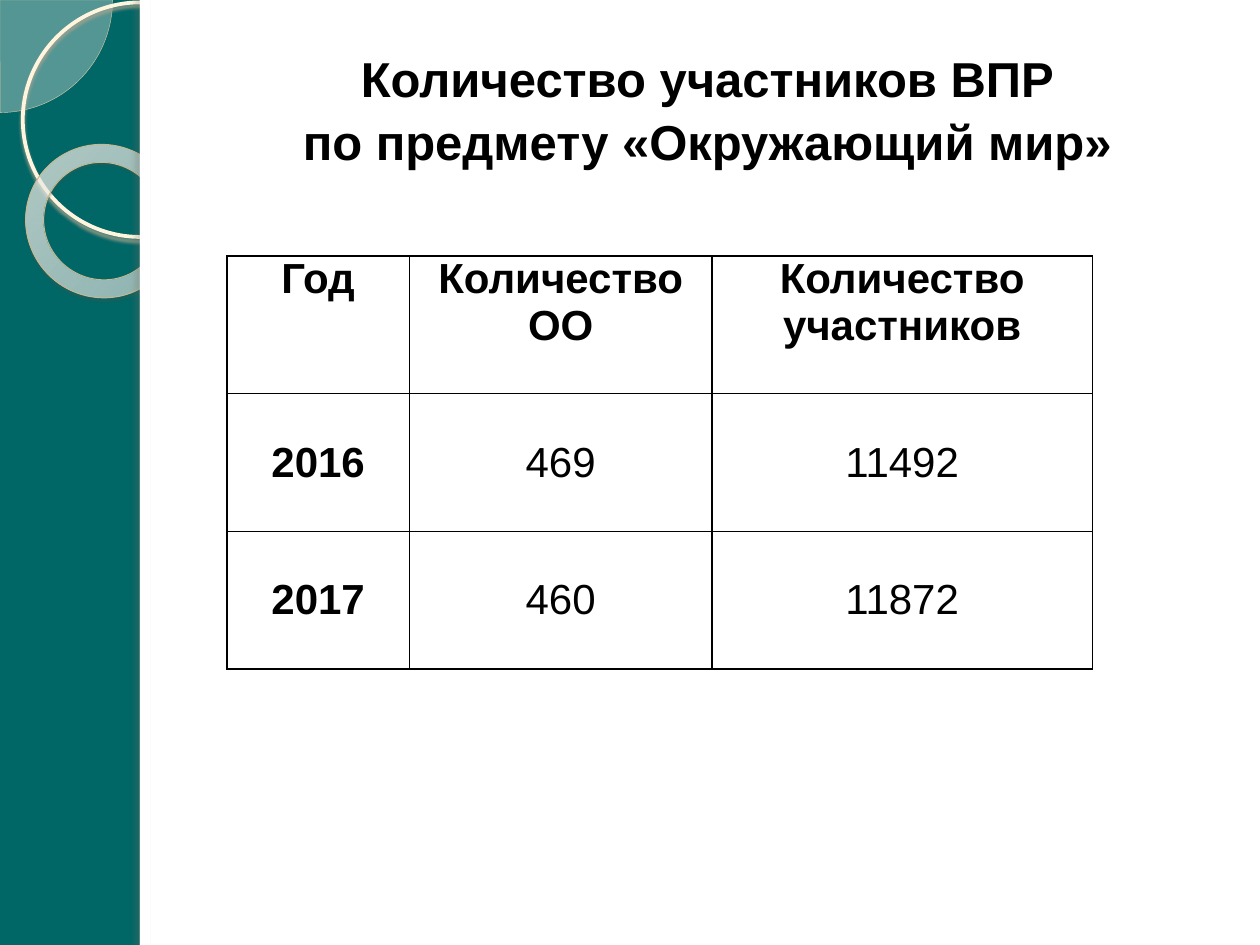
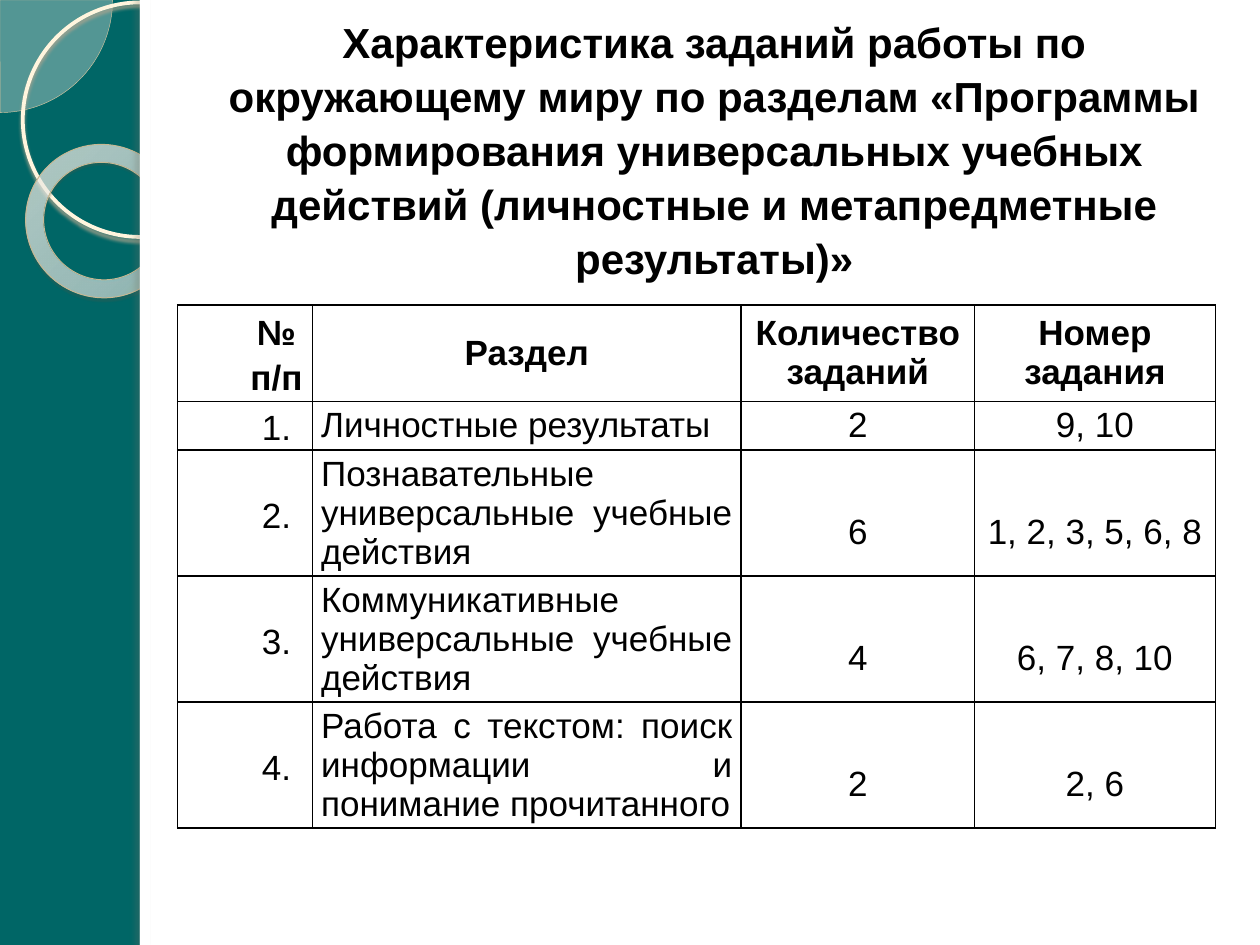
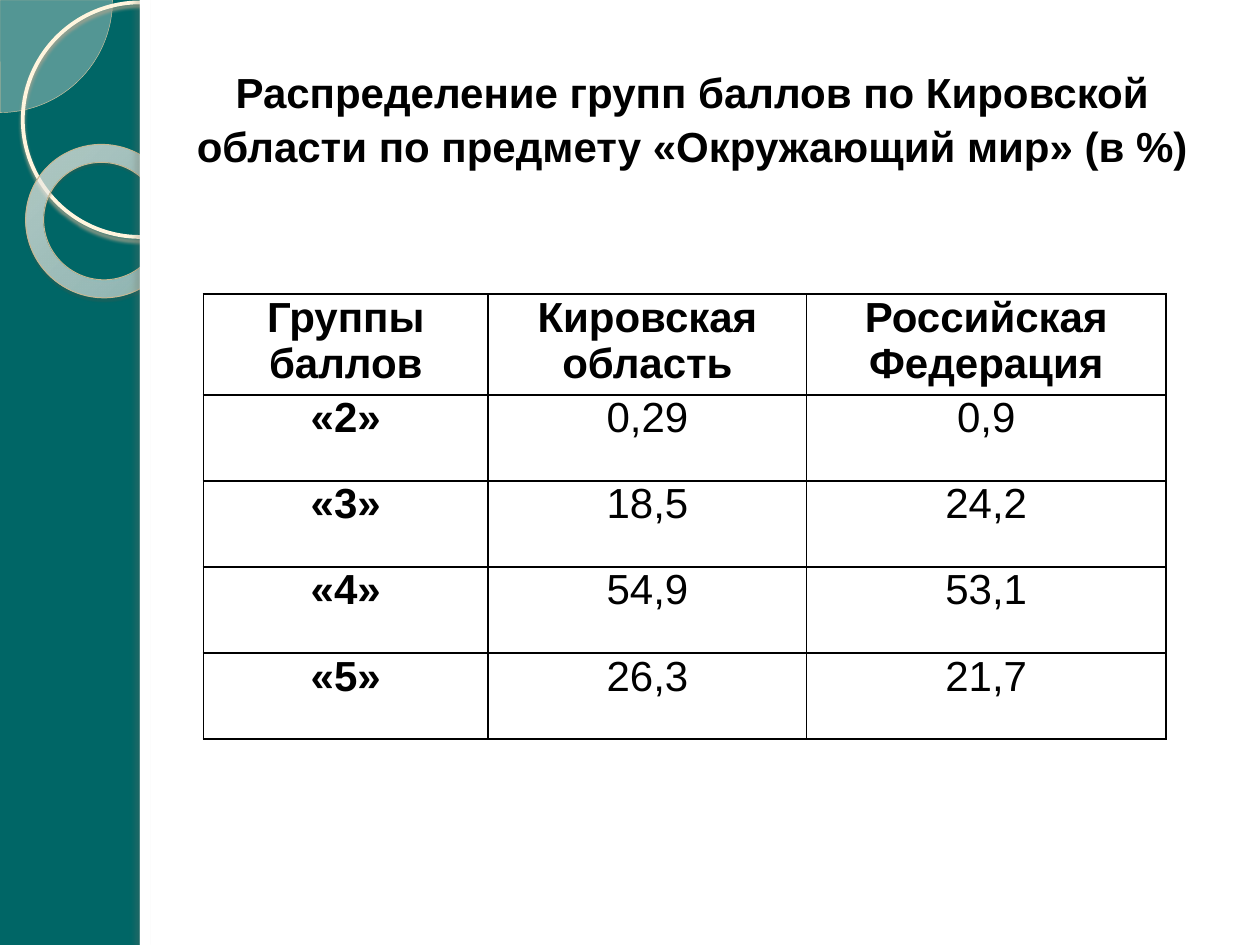
from lxml import etree
from pptx import Presentation
from pptx.dml.color import RGBColor
from pptx.enum.shapes import MSO_SHAPE
from pptx.enum.text import MSO_ANCHOR, PP_ALIGN
from pptx.oxml.ns import qn
from pptx.util import Pt

PIE, OVAL, DONUT, RECTANGLE = MSO_SHAPE.PIE, MSO_SHAPE.OVAL, MSO_SHAPE.DONUT, MSO_SHAPE.RECTANGLE
CENTER, JUSTIFY = PP_ALIGN.CENTER, PP_ALIGN.JUSTIFY
TOP, MIDDLE = MSO_ANCHOR.TOP, MSO_ANCHOR.MIDDLE

COLORS = {
    "band": "006666", "panel": "FFFFFF", "text": "000000", "border": "000000",
    "pie": "FEFAF4", "pie line": "D3C39F", "circle": "FFF5DE", "ring line": "C7B893",
    "circle shadow": "B0A68F", "ring shadow": "5A5444", "panel shadow": "736F63",
}
RING_STOPS = [(0, "FFFCF6", 70), (70, "FFFEFB", 55), (100, "F0D28E", 60)]
FONT = "Arial"

# kind, box, fill, (line colour, width), (shadow colour, opacity, blur, distance, angle)
DECORATIONS = [
    (PIE, (-64.3, -64.3, 128.6, 128.6), "pie", ("pie line", 0.25), None),
    (OVAL, (13, 1.4, 134, 134), None, ("circle", 2.15), ("circle shadow", 85, 2, 2, 90)),
    (DONUT, (14.4, 82.8, 88.6, 87.1), None, ("ring line", 0.58), ("ring shadow", 35, 1, 1.2, 75)),
    (RECTANGLE, (80, 0, 640, 540), "panel", None, None),
    (RECTANGLE, (80, 0, 5.8, 540), "panel", None, ("panel shadow", 25, 3, 3, 180)),
]

SLIDES = [
    {
        "title": "Количество участников ВПР\vпо предмету «Окружающий мир»",
        "title box": (109, 16.5, 590.4, 90), "title size": 28,
        "table at": (129.6, 146.2), "columns": (104.4, 172.8, 217.4),
        "heights": (78.7, 78.7, 78.7), "size": 24,
        "rows": [
            ("Год", "Количество ОО", "Количество участников"),
            ("2016", "469", "11492"),
            ("2017", "460", "11872"),
        ],
        "anchors": (TOP, MIDDLE), "bold first column": True, "numbered": False,
    },
    {
        "title": "Характеристика заданий работы по окружающему миру по разделам "
                 "«Программы формирования универсальных учебных действий "
                 "(личностные и метапредметные результаты)»",
        "title box": (113, 8, 590.4, 153), "title size": 24,
        "table at": (101.5, 174.2), "columns": (77, 245, 133.4, 137.6),
        "heights": (51.4, 25.7, 67, 67, 67), "size": 20,
        "rows": [
            ("№ п/п", "Раздел", "Количество заданий", "Номер задания"),
            ("1.", "Личностные результаты", "2", "9, 10"),
            ("2.", "Познавательные универсальные учебные действия", "6", "1, 2, 3, 5, 6, 8"),
            ("3.", "Коммуникативные универсальные учебные действия", "4", "6, 7, 8, 10"),
            ("4.", "Работа с текстом: поиск информации и понимание прочитанного", "2", "2, 6"),
        ],
        "anchors": (MIDDLE, MIDDLE), "bold first column": False, "numbered": True,
    },
    {
        "title": "Распределение групп баллов по Кировской области "
                 "по предмету «Окружающий мир» (в %)",
        "title box": (87.8, 22, 615.6, 90), "title size": 24,
        "table at": (116.2, 168), "columns": (162.8, 182, 205.2),
        "heights": (53.5, 49.2, 49.2, 49.2, 49.2), "size": 24,
        "rows": [
            ("Группы баллов", "Кировская область", "Российская Федерация"),
            ("«2»", "0,29", "0,9"),
            ("«3»", "18,5", "24,2"),
            ("«4»", "54,9", "53,1"),
            ("«5»", "26,3", "21,7"),
        ],
        "anchors": (TOP, TOP), "bold first column": True, "numbered": False,
    },
]


def add_child(parent, tag, **attributes):
    """Append a DrawingML element with the given attributes."""
    values = {name: str(value) for name, value in attributes.items()}
    return etree.SubElement(parent, qn(tag), values)


def style_paragraph(para, size, bold, align):
    para.alignment = align
    para.font.name = FONT
    para.font.size = Pt(size)
    para.font.bold = bold
    para.font.color.rgb = RGBColor.from_string(COLORS["text"])


deck = Presentation()
deck.slide_width, deck.slide_height = Pt(720), Pt(540)

for content in SLIDES:
    page = deck.slides.add_slide(deck.slide_layouts[6])
    page.background.fill.solid()
    page.background.fill.fore_color.rgb = RGBColor.from_string(COLORS["band"])

    # Side band decorations and the white panel
    for kind, bounds, fill, line, shadow in DECORATIONS:
        shape = page.shapes.add_shape(kind, *map(Pt, bounds))
        shape.shadow.inherit = False
        properties = shape.element.spPr
        if fill:
            shape.fill.solid()
            shape.fill.fore_color.rgb = RGBColor.from_string(COLORS[fill])
        else:
            shape.fill.background()
        if line:
            shape.line.color.rgb = RGBColor.from_string(COLORS[line[0]])
            shape.line.width = Pt(line[1])
        else:
            shape.line.fill.background()

        if kind == PIE:
            shape.adjustments[0], shape.adjustments[1] = 0, 54
            color = properties.find(qn("a:solidFill")).find(qn("a:srgbClr"))
            add_child(color, "a:alpha", val=33000)
        elif kind == DONUT:
            shape.rotation = 38.6
            shape.adjustments[0] = 0.118
            shape.fill.gradient()
            gradient = properties.find(qn("a:gradFill"))
            for child in list(gradient):
                gradient.remove(child)
            stops = add_child(gradient, "a:gsLst")
            for position, tint, opacity in RING_STOPS:
                stop = add_child(stops, "a:gs", pos=position * 1000)
                color = add_child(stop, "a:srgbClr", val=tint)
                add_child(color, "a:alpha", val=opacity * 1000)
            focus = add_child(gradient, "a:path", path="circle")
            add_child(focus, "a:fillToRect", l=-408000, t=-50000, r=508000, b=150000)

        if shadow:
            name, opacity, blur, distance, angle = shadow
            effect = add_child(properties.find(qn("a:effectLst")), "a:outerShdw",
                               blurRad=Pt(blur), dist=Pt(distance), dir=angle * 60000,
                               algn="ctr", rotWithShape=0)
            color = add_child(effect, "a:srgbClr", val=COLORS[name])
            add_child(color, "a:alpha", val=opacity * 1000)

    # Title
    box = page.shapes.add_textbox(*map(Pt, content["title box"]))
    frame = box.text_frame
    frame.word_wrap = True
    frame.vertical_anchor = MIDDLE
    frame.text = content["title"]
    frame.paragraphs[0].line_spacing = 1.07
    style_paragraph(frame.paragraphs[0], content["title size"], True, CENTER)

    # Table
    rows, columns, heights = content["rows"], content["columns"], content["heights"]
    left, top = content["table at"]
    table = page.shapes.add_table(len(rows), len(columns), Pt(left), Pt(top),
                                  Pt(sum(columns)), Pt(sum(heights))).table
    table.first_row = table.horz_banding = False
    for column, width in zip(table.columns, columns):
        column.width = Pt(width)
    for row, height in zip(table.rows, heights):
        row.height = Pt(height)

    for row_index, row in enumerate(rows):
        is_header = row_index == 0
        for column_index, text in enumerate(row):
            is_first = column_index == 0
            cell = table.cell(row_index, column_index)
            cell.margin_left = cell.margin_right = Pt(5)
            cell.margin_top = cell.margin_bottom = 0
            cell.vertical_anchor = content["anchors"][0 if is_header else 1]
            cell.text = text
            para = cell.text_frame.paragraphs[0]
            bold = is_header or (is_first and content["bold first column"])
            align = CENTER
            if content["numbered"]:
                if is_first:
                    cell.margin_left = Pt(41)
                    para.line_spacing = 1.15
                elif column_index == 1 and not is_header:
                    align = JUSTIFY
                elif row_index > 1:
                    cell.margin_top = Pt(22)
            style_paragraph(para, content["size"], bold, align)

            cell_properties = cell._tc.get_or_add_tcPr()
            for side in ("a:lnL", "a:lnR", "a:lnT", "a:lnB"):
                border = add_child(cell_properties, side, w=Pt(1))
                border_fill = add_child(border, "a:solidFill")
                add_child(border_fill, "a:srgbClr", val=COLORS["border"])
            cell.fill.background()

deck.save("out.pptx")
